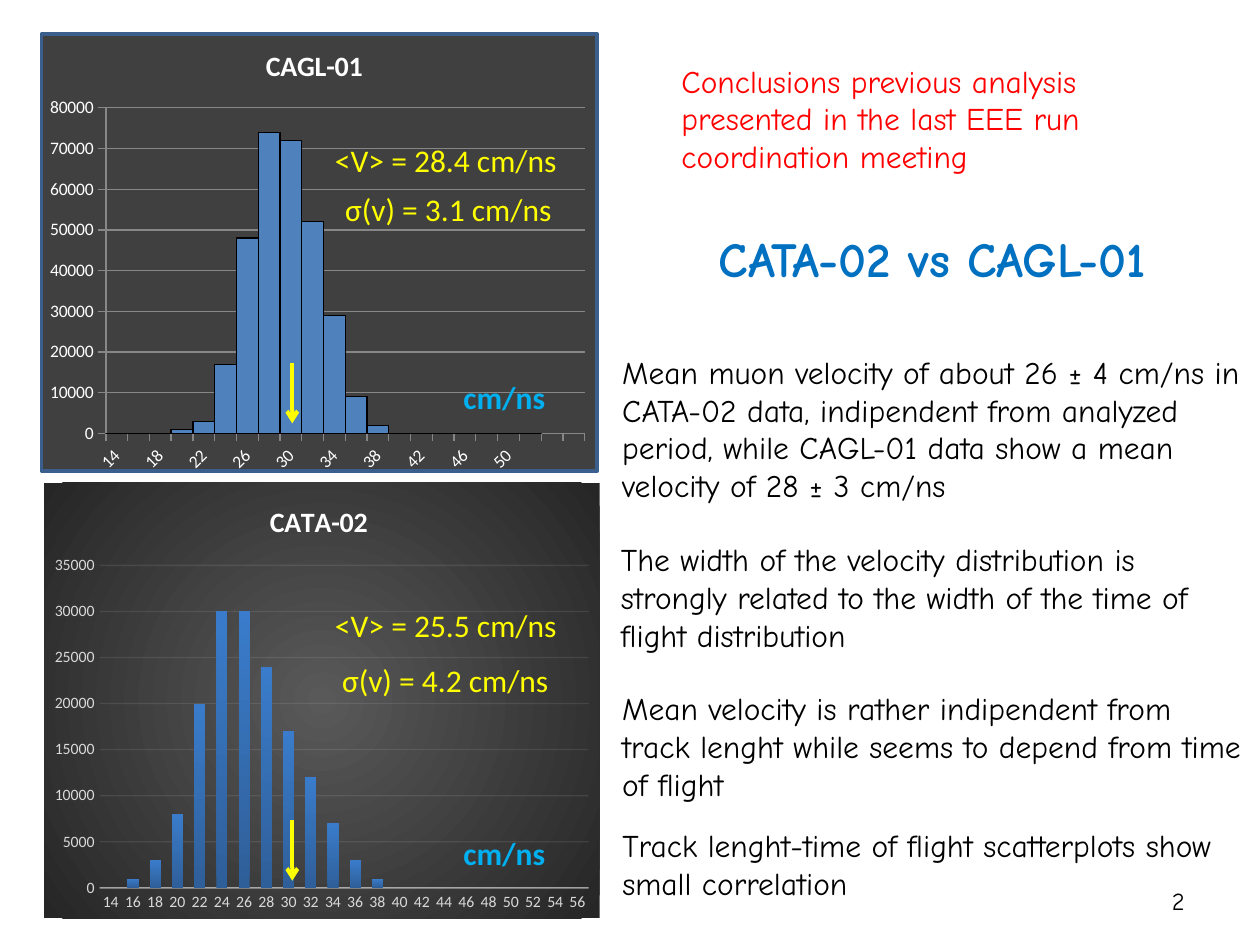
import pptx
import pptx.util
import pptx.chart.data
import pptx.dml.color
import pptx.enum.chart
import pptx.enum.shapes
import pptx.enum.text
import pptx.oxml
import pptx.oxml.ns
from lxml import etree

Inches, Pt = pptx.util.Inches, pptx.util.Pt
qn = pptx.oxml.ns.qn
Align = pptx.enum.text.PP_ALIGN
Anchor = pptx.enum.text.MSO_ANCHOR
Tick = pptx.enum.chart.XL_TICK_MARK
NS = pptx.oxml.ns.nsdecls("c", "a")
HEX = {"black": "000000", "white": "FFFFFF", "red": "FF0000", "title": "0070C0",
       "unit": "00B0F0", "yellow": "FFFF00", "panel": "404040", "frame": "3A5F8C",
       "bar": "4F81BD", "low": "2F5F99", "high": "3A7CCB", "pale": "F2F2F2",
       "label": "D9D9D9", "grid": "878787", "mid": "595959", "edge": "262626"}


def tint(name):
    return pptx.dml.color.RGBColor.from_string(HEX[name])


def write(frame, text, face, size, color, bold=False, align=Align.LEFT, anchor=Anchor.TOP):
    frame.word_wrap = True
    frame.vertical_anchor = anchor
    para = frame.paragraphs[0]
    para.alignment = align
    run = para.add_run()
    run.text = text
    font = run.font
    font.name, font.size, font.bold = face, Pt(size), bold
    font.color.rgb = tint(color)


deck = pptx.Presentation()
deck.slide_width, deck.slide_height = Inches(10), Inches(7.5)
slide = deck.slides.add_slide(deck.slide_layouts[5])
shapes = slide.shapes

title = shapes.title
title.left, title.top, title.width, title.height = map(Inches, (4.98, 1.76, 4.84, 0.57))
write(title.text_frame, "CATA-02 vs CAGL-01", "Comic Neue", 28, "title", True, Align.CENTER)

panel = shapes.add_shape(pptx.enum.shapes.MSO_SHAPE.RECTANGLE,
                         *map(Inches, (0.33, 0.27, 4.41, 3.47)))
panel.shadow.inherit = False
panel.fill.solid()
panel.fill.fore_color.rgb = tint("panel")
panel.line.color.rgb = tint("frame")
panel.line.width = Pt(2)

bins = [str(v) for v in range(14, 58, 2)]
plots = [
    dict(name="CATA-02 ", box=(0.35, 3.83, 4.41, 3.46), cats=bins, top=35000, step=5000,
         vals=[0, 1, 3, 8, 20, 30, 30, 24, 17, 12, 7, 3, 1] + [0] * 9,
         gap=100, lap=-24, size=9, label="label", tick=Tick.NONE, line="pale",
         inner=(0.1, 0.19, 0.88, 0.74)),
    dict(name="CAGL-01 ", box=(0.31, 0.21, 4.42, 3.59), cats=bins[:19] + ["Altro", "", ""],
         top=80000, step=10000,
         vals=[0, 0, 0, 1, 3, 17, 48, 74, 72, 52, 29, 9, 2] + [0] * 7 + [None] * 2,
         gap=0, lap=0, size=10, label="white", tick=Tick.OUTSIDE, line="grid",
         inner=(0.12, 0.18, 0.86, 0.72)),
]
for plot in plots:
    data = pptx.chart.data.CategoryChartData()
    data.categories = plot["cats"]
    data.add_series("Series 1", [v if v is None else v * 1000 for v in plot["vals"]])
    chart = shapes.add_chart(pptx.enum.chart.XL_CHART_TYPE.COLUMN_CLUSTERED,
                             *map(Inches, plot["box"]), data).chart
    chart.font.name, chart.font.size = "Calibri", Pt(10)
    chart.has_legend = False
    chart.has_title = True
    write(chart.chart_title.text_frame, plot["name"], "Calibri", 16, "white", True, Align.CENTER)
    chart.chart_title.include_in_layout = False
    bars = chart.plots[0]
    bars.vary_by_categories = False
    bars.gap_width, bars.overlap = plot["gap"], plot["lap"]
    cat, val = chart.category_axis, chart.value_axis
    val.minimum_scale, val.maximum_scale, val.major_unit = 0, plot["top"], plot["step"]
    val.has_major_gridlines = True
    val.tick_labels.number_format = "0"
    val.tick_labels.number_format_is_linked = False
    for axis in (cat, val):
        axis.major_tick_mark = plot["tick"]
        font = axis.tick_labels.font
        font.name, font.size = "Calibri", Pt(plot["size"])
        font.color.rgb = tint(plot["label"])
        axis.format.line.color.rgb = tint(plot["line"])
    grid = val.major_gridlines.format.line
    grid.color.rgb = tint(plot["line"])
    grid.width = Pt(0.75)
    fill = bars.series[0].format.fill
    root = chart._chartSpace
    if plot["gap"]:
        val.format.line.fill.background()
        cat.format.line.width = Pt(1)
        fill.gradient()
        fill.gradient_angle = 90
        for stop, name in zip(fill.gradient_stops, ("low", "high")):
            stop.color.rgb = tint(name)
        for line, part in ((grid, 10), (cat.format.line, 54)):
            clr = line._ln.find(".//" + qn("a:srgbClr"))
            etree.SubElement(clr, qn("a:alpha")).set("val", str(part * 1000))
        root.find(qn("c:chart")).addnext(pptx.oxml.parse_xml(
            f'<c:spPr {NS}><a:gradFill><a:gsLst>'
            f'<a:gs pos="0"><a:srgbClr val="{HEX["mid"]}"/></a:gs>'
            f'<a:gs pos="100000"><a:srgbClr val="{HEX["edge"]}"/></a:gs></a:gsLst>'
            '<a:path path="circle"><a:fillToRect l="50000" t="50000" r="50000" b="50000"/>'
            '</a:path></a:gradFill><a:ln><a:noFill/></a:ln></c:spPr>'))
    else:
        fill.solid()
        fill.fore_color.rgb = tint("bar")
        edge = bars.series[0].format.line
        edge.color.rgb = tint("black")
        edge.width = Pt(0.75)
        node = cat._element
        node.find(qn("c:txPr")).find(qn("a:bodyPr")).set("rot", "-2700000")
        node.find(qn("c:noMultiLvlLbl")).addprevious(
            pptx.oxml.parse_xml(f'<c:tickLblSkip {NS} val="2"/>'))
    area = root.find(".//" + qn("c:plotArea"))
    for old in area.findall(qn("c:layout")):
        area.remove(old)
    sides = "".join(f'<c:{k} val="{v}"/>' for k, v in zip("xywh", plot["inner"]))
    area.insert(0, pptx.oxml.parse_xml(
        f'<c:layout {NS}><c:manualLayout><c:layoutTarget val="inner"/>'
        f'<c:xMode val="edge"/><c:yMode val="edge"/>{sides}</c:manualLayout></c:layout>'))

calm = ("Calibri", 18, "yellow")
unit = ("Calibri", 18, "unit", True)
body = ("Comic Neue", 18, "black")
notes = [
    ((2.56, 1.07, 2.28, 0.4), "<V> = 28.4 cm/ns", calm),
    ((2.64, 1.46, 2.28, 0.4), "σ(v) = 3.1 cm/ns", calm),
    ((2.56, 4.76, 2.28, 0.4), "<V> = 25.5 cm/ns", calm),
    ((2.56, 5.2, 2.28, 0.4), " σ(v) = 4.2 cm/ns", calm),
    ((3.58, 2.95, 1.34, 0.4), "cm/ns", unit),
    ((3.58, 6.57, 1.34, 0.4), "cm/ns", unit),
    ((5.31, 0.44, 4.41, 1.01), "Conclusions previous analysis presented in the last EEE run "
     "coordination meeting", ("Comic Neue", 18, "red")),
    ((4.84, 2.75, 5.16, 1.31), "Mean muon velocity of about 26 ± 4 cm/ns in CATA-02 data, "
     "indipendent from analyzed period, while CAGL-01 data show a mean velocity of "
     "28 ± 3 cm/ns", body),
    ((4.83, 4.24, 4.9, 1.01), "The width of the velocity distribution is strongly related to "
     "the width of the time of flight distribution", body),
    ((4.84, 5.42, 5.16, 1.01), "Mean velocity is rather indipendent from track lenght while "
     "seems to depend from time of flight", body),
    ((4.84, 6.51, 5.02, 0.71), "Track lenght-time of flight scatterplots show small "
     "correlation", body),
    ((7.17, 6.95, 2.33, 0.4), "2",
     ("Comic Neue", 14, "black", False, Align.RIGHT, Anchor.MIDDLE)),
]
for box, text, style in notes:
    write(shapes.add_textbox(*map(Inches, box)).text_frame, text, *style)

for top in (2.88, 6.51):
    arrow = shapes.add_connector(pptx.enum.shapes.MSO_CONNECTOR.STRAIGHT, Inches(2.32),
                                 Inches(top), Inches(2.32), Inches(top + 0.48))
    arrow.line.color.rgb = tint("yellow")
    arrow.line.width = Pt(2.25)
    etree.SubElement(arrow.line._ln, qn("a:tailEnd")).set("type", "arrow")
    etree.SubElement(arrow._element.spPr, qn("a:effectLst"))

deck.save("out.pptx")
